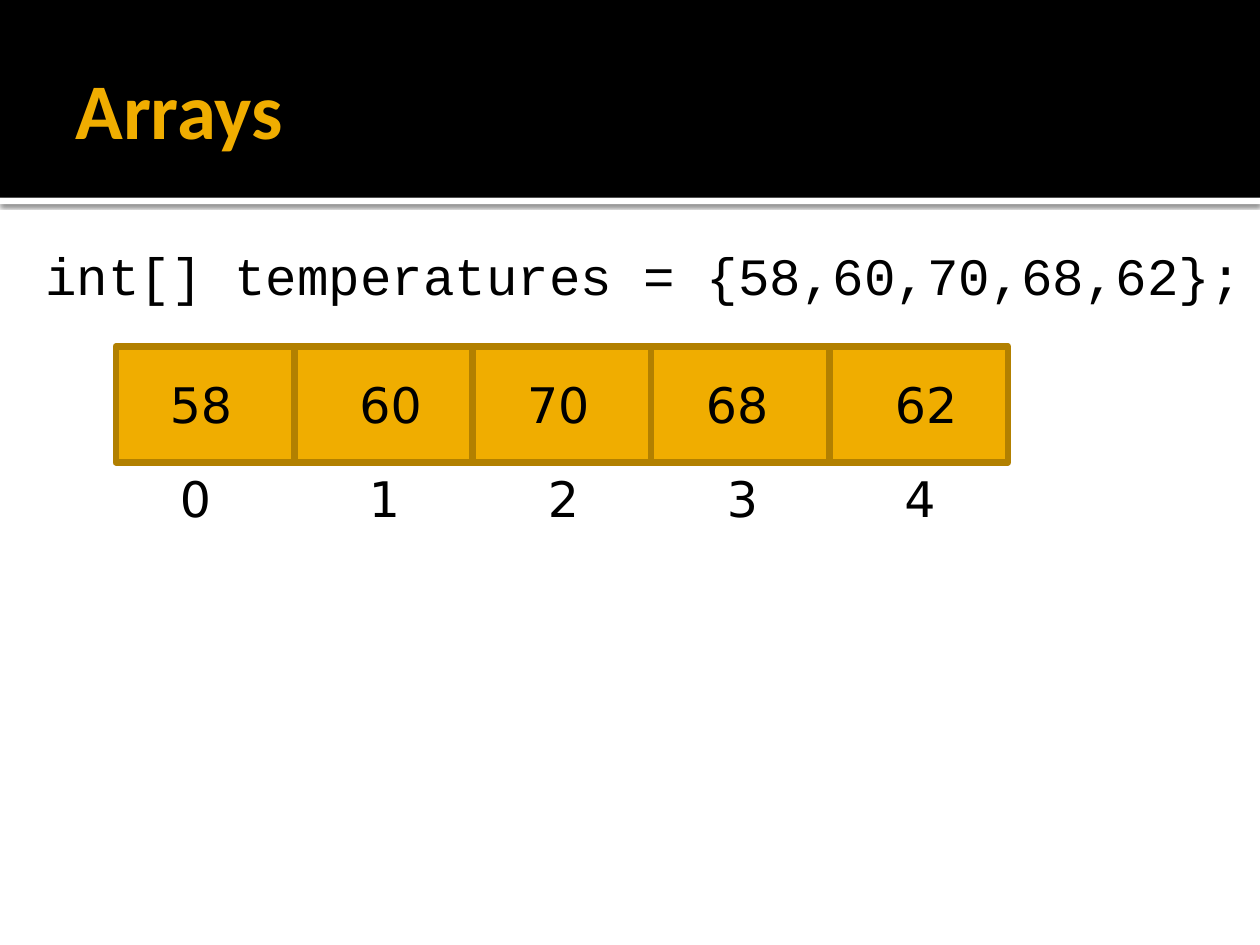
"""Build a slide that shows an array with its values and indexes."""
from lxml.etree import fromstring
from pptx import Presentation
from pptx.dml.color import RGBColor
from pptx.enum.shapes import MSO_SHAPE
from pptx.enum.text import MSO_ANCHOR, MSO_AUTO_SIZE, PP_ALIGN
from pptx.util import Inches, Pt

BLACK = RGBColor(0x00, 0x00, 0x00)
WHITE = RGBColor(0xFF, 0xFF, 0xFF)
GOLD = RGBColor(0xF0, 0xAD, 0x00)
BROWN = RGBColor(0xB2, 0x80, 0x00)

SHADOW = (
    '<a:effectLst xmlns:a="http://schemas.openxmlformats.org/drawingml/2006/main">'
    '<a:outerShdw blurRad="31750" dist="10160" dir="5400000" rotWithShape="0">'
    '<a:srgbClr val="000000"><a:alpha val="60000"/></a:srgbClr>'
    '</a:outerShdw></a:effectLst>'
)


def write(frame, text, font="DejaVu Sans", size=28, color=BLACK, bold=False,
          align=PP_ALIGN.LEFT):
    par = frame.paragraphs[0]
    par.alignment = align
    run = par.add_run()
    run.text = text
    run.font.name = font
    run.font.size = Pt(size)
    run.font.bold = bold
    run.font.color.rgb = color


class Page:
    def __init__(self, slide):
        self.shapes = slide.shapes

    def rect(self, left, top, width, height, fill, line=None, shadow=False):
        box = self.shapes.add_shape(MSO_SHAPE.RECTANGLE, Inches(left), Inches(top),
                                    Inches(width), Inches(height))
        box.shadow.inherit = False
        box.fill.solid()
        box.fill.fore_color.rgb = fill
        if line is None:
            box.line.fill.background()
        else:
            box.line.color.rgb = line
            box.line.width = Pt(3.78)
        if shadow:
            props = box.fill._xPr
            props.replace(props.find("{*}effectLst"), fromstring(SHADOW))

    def text(self, left, top, width, height, text, pad=(0.1, 0.05, 0.1, 0.05),
             anchor=MSO_ANCHOR.TOP, wrap=True, **style):
        box = self.shapes.add_textbox(Inches(left), Inches(top),
                                      Inches(width), Inches(height))
        frame = box.text_frame
        frame.word_wrap = wrap
        frame.auto_size = MSO_AUTO_SIZE.NONE if wrap else MSO_AUTO_SIZE.SHAPE_TO_FIT_TEXT
        frame.vertical_anchor = anchor
        (frame.margin_left, frame.margin_top,
         frame.margin_right, frame.margin_bottom) = map(Inches, pad)
        write(frame, text, **style)
        return frame

    def code(self, left, top, width, height, text):
        frame = self.text(left, top, width, height, text, pad=(0.06, 0.1, 0.1, 0.05),
                          font="Courier New", size=30)
        props = frame.paragraphs[0]._p.get_or_add_pPr()
        props.set("marL", str(Inches(0.48)))
        props.set("indent", str(Inches(-0.35)))

    def cell(self, left, width):
        self.rect(left, 2.75, width, 0.92, GOLD, line=BROWN)

    def label(self, left, top, width, text, align=PP_ALIGN.LEFT):
        self.text(left, top, width, 0.57, text, wrap=False, align=align)


def main():
    deck = Presentation()
    deck.slide_width, deck.slide_height = Inches(10), Inches(7.5)
    page = Page(deck.slides.add_slide(deck.slide_layouts[6]))

    page.rect(0, 1.57, 10, 0.05, WHITE, shadow=True)
    page.rect(0, 0, 10, 1.57, BLACK)
    page.text(0.5, 0.17, 9, 1.37, "Arrays", pad=(0.1, 0.05, 0.05, 0.05),
              anchor=MSO_ANCHOR.MIDDLE, font="Calibri", size=45, color=GOLD, bold=True)
    page.code(0.17, 1.83, 10.67, 6.5, "int[] temperatures = {58,60,70,68,62};")

    start, step = 0.92, 1.416
    temps = [(58, 1.25), (60, 2.75), (70, 4.08), (68, 5.5), (62, 7)]
    marks = [1.33, 2.83, 4.25, 5.67, 7.08]
    for index in range(len(temps)):
        page.cell(start + index * step, step)
    for index, left in enumerate(marks):
        page.label(left, 3.67, 0.45, str(index))
    for index, (temp, left) in enumerate(temps):
        align = PP_ALIGN.CENTER if index else PP_ALIGN.LEFT
        page.label(left, 2.92, 0.7, str(temp), align=align)

    deck.save("out.pptx")


if __name__ == "__main__":
    main()
